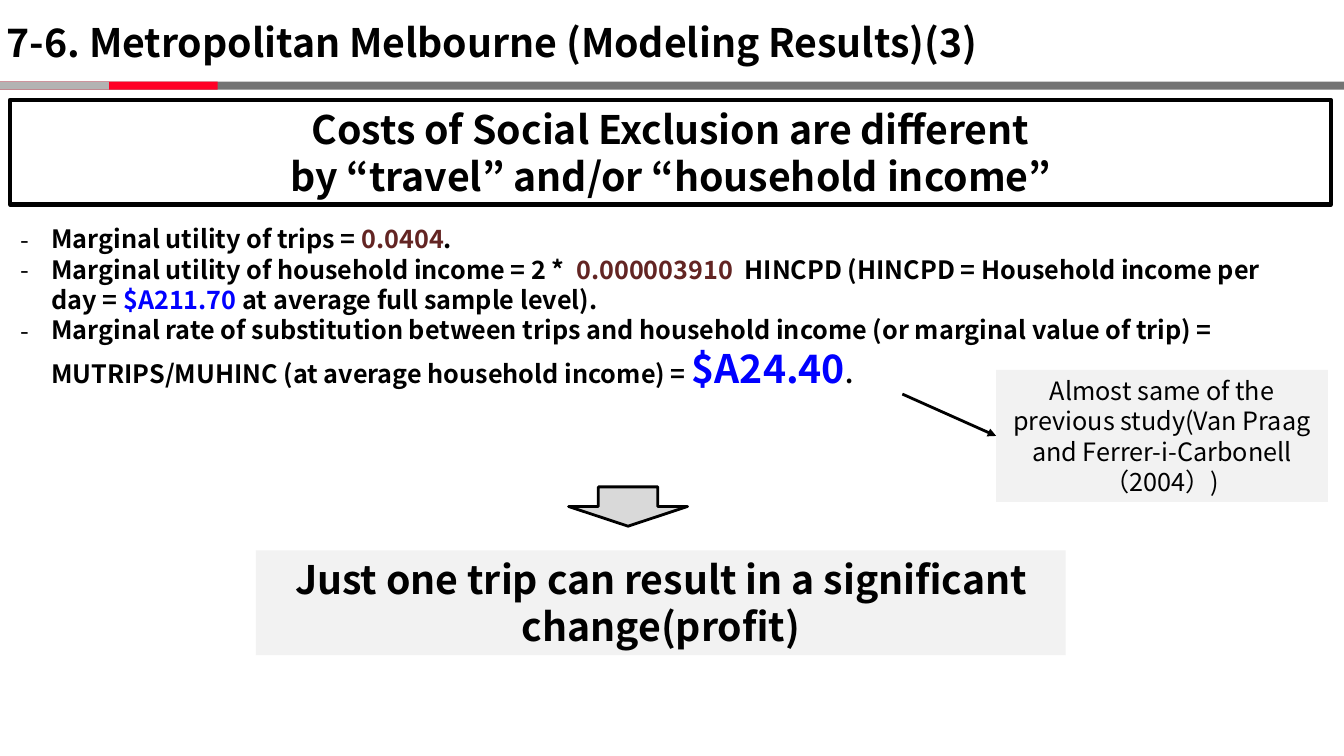
from lxml.etree import SubElement
from pptx import Presentation
from pptx.dml.color import RGBColor
from pptx.enum.shapes import MSO_CONNECTOR, MSO_SHAPE
from pptx.enum.text import MSO_ANCHOR, PP_ALIGN
from pptx.oxml.ns import qn
from pptx.util import Inches, Pt

FONT = "Noto Sans CJK JP"
BLACK, BLUE, MAROON = "000000", "0000FF", "632523"
PALE, GREY = "F2F2F2", "D9D9D9"
HEADING = {"size": 28, "bold": True}
BODY = {"size": 18, "bold": True}
PLAIN = {"size": 18, "bold": False}


def colour(code):
    return RGBColor.from_string(code)


class SlideBuilder:
    """Holds the deck, its current slide and the text style; places are percentages of the slide."""

    def __init__(self, width, height):
        self.deck = Presentation()
        self.deck.slide_width, self.deck.slide_height = Inches(width), Inches(height)
        self.page = self.deck.slides.add_slide(self.deck.slide_layouts[6])

    def place(self, *shares):
        """Turn alternating horizontal and vertical percentages into lengths."""
        sides = (self.deck.slide_width, self.deck.slide_height)
        return [int(share * sides[i % 2] / 100) for i, share in enumerate(shares)]

    def shape(self, place, fill=None, line=None, kind=MSO_SHAPE.RECTANGLE):
        box = self.page.shapes.add_shape(kind, *self.place(*place))
        box.shadow.inherit = False
        if fill:
            box.fill.solid()
            box.fill.fore_color.rgb = colour(fill)
        else:
            box.fill.background()
        if line:
            box.line.color.rgb = colour(BLACK)
            box.line.width = Pt(line)
        else:
            box.line.fill.background()
        return box

    def span(self, para, text, style):
        span = para.add_run()
        span.text = text
        values = {"name": FONT, **style, "size": Pt(style["size"])}
        code = values.pop("color", BLACK)
        for name, value in values.items():
            setattr(span.font, name, value)
        span.font.color.rgb = colour(code)
        SubElement(span.font._element, qn("a:ea"), typeface=FONT)

    def panel(self, place, lines, style, **look):
        """Draw a rectangle with centred text, one line break between lines."""
        box = self.shape(place, **look)
        box.text_frame.word_wrap = True
        box.text_frame.vertical_anchor = MSO_ANCHOR.MIDDLE
        para = box.text_frame.paragraphs[0]
        para.alignment = PP_ALIGN.CENTER
        for number, line in enumerate(lines):
            if number:
                para.add_line_break()
            self.span(para, line, style)
        return box

    def text(self, place, paragraphs, style, bullet=None, wrap=True):
        """Write paragraphs, each a list of (text, style changes)."""
        frame = self.page.shapes.add_textbox(*self.place(*place)).text_frame
        frame.word_wrap = wrap
        for number, spans in enumerate(paragraphs):
            para = frame.add_paragraph() if number else frame.paragraphs[0]
            para.alignment = PP_ALIGN.LEFT
            if bullet:
                indent = Inches(0.31)
                properties = para._p.get_or_add_pPr()
                properties.set("marL", str(indent))
                properties.set("indent", str(-indent))
                SubElement(properties, qn("a:buFont"), typeface=FONT)
                SubElement(properties, qn("a:buChar"), char=bullet)
            for text, changes in spans:
                self.span(para, text, {**style, **changes})

    def arrow(self, start, target, side):
        """Run an arrow from a point to the middle of a side of a box."""
        arrow = self.page.shapes.add_connector(
            MSO_CONNECTOR.STRAIGHT, *self.place(*start), *self.place(*start))
        arrow.end_connect(target, side)
        arrow.line.color.rgb = colour(BLACK)
        arrow.line.width = Pt(2)
        SubElement(arrow.line._get_or_add_ln(), qn("a:tailEnd"), type="triangle")
        SubElement(arrow._element.spPr, qn("a:effectLst"))


def main():
    slide = SlideBuilder(13.33, 7.5)
    for width, fill in ((100, "737373"), (16.2, "FF0026"), (8.1, "B3B3B3")):
        slide.shape((0, 10.8, width, 1.07), fill)

    slide.text((-0.23, 1.73, 81.32, 7.6),
               [[("7-6. Metropolitan Melbourne (Modeling Results)(3)", {})]],
               HEADING, wrap=False)
    slide.panel((0.75, 13.2, 98.27, 13.87),
                ["Costs of Social Exclusion are different",
                 "by “travel” and/or “household income”"], HEADING, line=3)

    maroon, blue = {"color": MAROON}, {"color": BLUE}
    findings = [
        [("Marginal utility of trips = ", {}), ("0.0404", maroon), (".", {})],
        [("Marginal utility of household income = 2 *  ", {}),
         ("0.000003910  ", maroon),
         ("HINCPD (HINCPD = Household income per day = ", {}),
         ("$A211.70 ", blue),
         ("at average full sample level).", {})],
        [("Marginal rate of substitution between trips and household income "
          "(or marginal value of trip) = MUTRIPS/MUHINC "
          "(at average household income) = ", {}),
         ("$A24.40", {**blue, "size": 28}), (".", {})],
    ]
    slide.text((0.75, 28.93, 96.92, 23.73), findings, BODY, bullet="-")

    note = slide.panel(
        (74.12, 48.93, 24.68, 17.47),
        ["Almost same of the previous study(Van Praag and Ferrer-i-Carbonell（2004）)"],
        PLAIN, fill=PALE)
    slide.arrow((67.14, 52.13), note, 1)
    slide.panel((19.05, 72.8, 60.24, 13.87),
                ["Just one trip can result in a significant change(profit)"],
                HEADING, fill=PALE)
    slide.shape((42.31, 64.4, 8.85, 5.2), GREY, 2, MSO_SHAPE.DOWN_ARROW)
    slide.deck.save("out.pptx")


if __name__ == "__main__":
    main()
